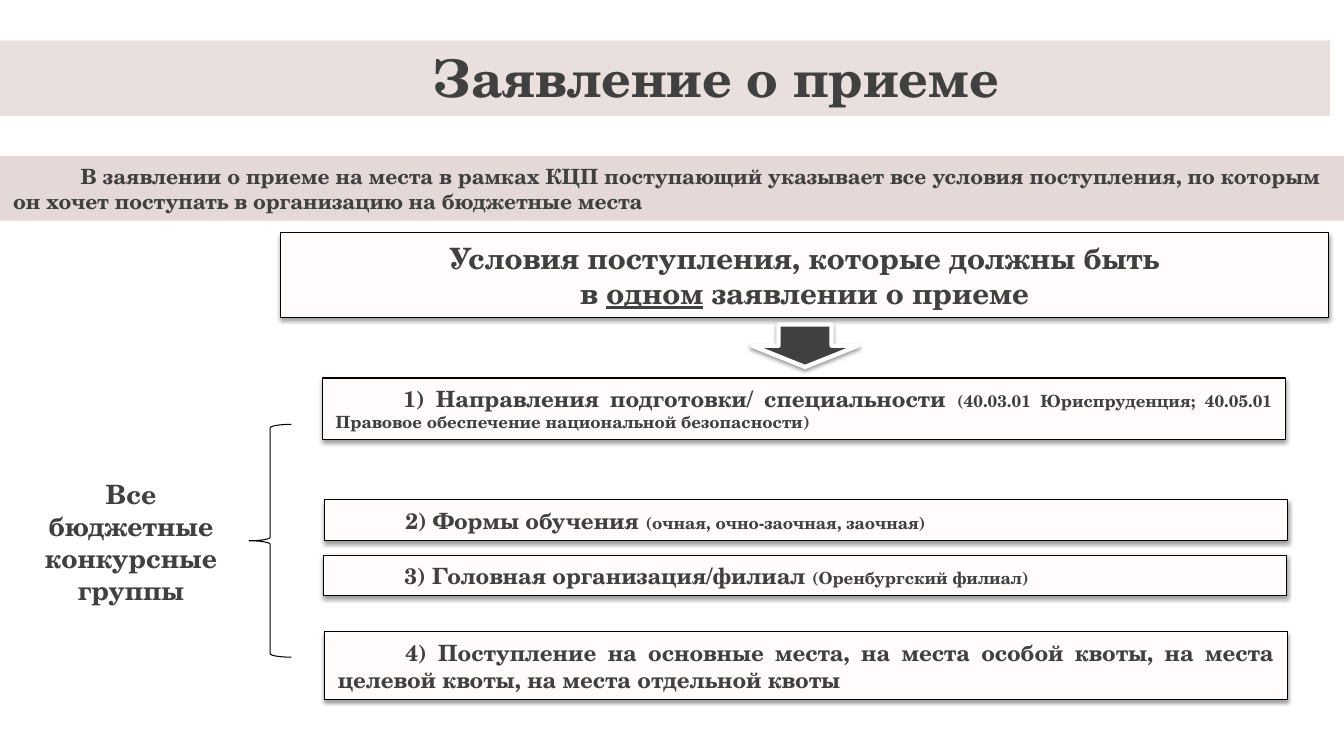
from lxml import etree
from pptx import Presentation
from pptx import util as u
from pptx.dml.color import RGBColor
from pptx.enum import shapes, text
from pptx.oxml.ns import qn

COLORS = {"band": "591300", "box": "FFFCFB", "text": "404040",
          "line": "000000", "white": "FFFFFF"}
FONT = "TeX Gyre Schola"
SHAPE = shapes.MSO_SHAPE
ALIGN = text.PP_ALIGN


def rgb(name):
    return RGBColor.from_string(COLORS[name])


def add_alpha(color, percent):
    etree.SubElement(color, qn("a:alpha"), val=str(percent * 1000))


def add_shadow(effects):
    shadow = etree.SubElement(effects, qn("a:outerShdw"), blurRad=str(u.Pt(3.1)),
                              dist=str(u.Pt(1.6)), dir="5400000", rotWithShape="0")
    add_alpha(etree.SubElement(shadow, qn("a:srgbClr"), val=COLORS["line"]), 38)


class SlideBuilder:
    def __init__(self, s):
        self.s = s

    def fill_text(self, sp, paragraphs, align, indent=0, anchor=text.MSO_ANCHOR.MIDDLE):
        """Each paragraph is a list of (text, size, underline) runs."""
        tf = sp.text_frame
        tf.word_wrap = True
        tf.auto_size = text.MSO_AUTO_SIZE.NONE
        tf.vertical_anchor = anchor
        tf.margin_left = tf.margin_right = u.Inches(0.13)
        tf.margin_top = tf.margin_bottom = u.Inches(0.07)
        for i, runs in enumerate(paragraphs):
            p = tf.add_paragraph() if i else tf.paragraphs[0]
            p.alignment = align
            if indent:
                p._p.get_or_add_pPr().set("indent", str(u.Inches(indent)))
            for content, size, underline in runs:
                r = p.add_run()
                r.text = content
                r.font.name, r.font.size, r.font.bold = FONT, u.Pt(size), True
                r.font.color.rgb = rgb("text")
                if underline:
                    r.font.underline = True

    def place(self, sp, at):
        sp.left, sp.top, sp.width, sp.height = map(u.Inches, at)

    def title(self, at, content, size):
        sp = self.s.shapes.title
        self.place(sp, at)
        self.fill_text(sp, [[(content, size, False)]], ALIGN.CENTER)

    def shape(self, kind, at, fill=None, line=None, width=0.75, shadow=False):
        sp = self.s.shapes.add_shape(kind, *map(u.Inches, at))
        if fill:
            sp.fill.solid()
            sp.fill.fore_color.rgb = rgb(fill)
        else:
            sp.fill.background()
        if line:
            sp.line.color.rgb = rgb(line)
            sp.line.width = u.Pt(width)
        else:
            sp.line.fill.background()
        sp.shadow.inherit = False
        if shadow:
            add_shadow(sp._element.spPr.find(qn("a:effectLst")))
        return sp

    def band(self, at, opacity):
        sp = self.shape(SHAPE.RECTANGLE, at, "band")
        add_alpha(sp._element.spPr.find(qn("a:solidFill"))[0], opacity)
        return sp

    def box(self, at, paragraphs, align, indent=0):
        sp = self.shape(SHAPE.RECTANGLE, at, "box", "line", shadow=True)
        self.fill_text(sp, paragraphs, align, indent)

    def label(self, at, lines, size):
        sp = self.s.shapes.add_textbox(*map(u.Inches, at))
        self.fill_text(sp, [[(line, size, False)] for line in lines], ALIGN.CENTER,
                       anchor=text.MSO_ANCHOR.TOP)
        for p in sp.text_frame.paragraphs:
            for r in p.runs:
                effects = etree.Element(qn("a:effectLst"))
                r._r.rPr.find(qn("a:solidFill")).addnext(effects)
                add_shadow(effects)


def main():
    prs = Presentation()
    prs.slide_width, prs.slide_height = u.Inches(13.33), u.Inches(7.5)
    b = SlideBuilder(prs.slides.add_slide(prs.slide_layouts[5]))

    # Title over its band
    b.band((-0.14, 0.4, 13.33, 0.75), 13)
    b.title((3.97, 0.38, 6.26, 0.76), "Заявление о приеме", 37)
    title = b.s.shapes.title._element
    title.getparent().append(title)

    # Introduction
    intro = b.band((0, 1.55, 13.33, 0.64), 16)
    b.fill_text(intro, [[("В заявлении о приеме на места в рамках КЦП поступающий указывает "
                          "все условия поступления, по которым он хочет поступать "
                          "в организацию на бюджетные места", 15, False)]], ALIGN.LEFT, 0.67)

    # Heading box and arrow
    b.box((2.78, 2.31, 10.4, 0.84),
          [[("Условия поступления, которые должны быть", 21, False)],
           [("в ", 21, False), ("одном", 21, True), (" заявлении о приеме", 21, False)]],
          ALIGN.CENTER)
    b.shape(SHAPE.DOWN_ARROW, (7.46, 3.22, 1.05, 0.42), "text", "white", 3, True)

    # Conditions: left, top, height, main text, detail
    conditions = [
        (3.2, 3.75, 0.61, "1) Направления подготовки/ специальности ",
         "(40.03.01 Юриспруденция; 40.05.01 Правовое обеспечение национальной безопасности)"),
        (3.22, 4.96, 0.4, "2) Формы обучения ", "(очная, очно-заочная, заочная)"),
        (3.21, 5.51, 0.4, "3) Головная организация/филиал ", "(Оренбургский филиал)"),
        (3.22, 6.27, 0.67, "4) Поступление на основные места, на места особой квоты, "
         "на места целевой квоты, на места отдельной квоты", ""),
    ]
    for left, top, height, main_text, detail in conditions:
        runs = [(main_text, 16, False)]
        if detail:
            runs.append((detail, 12, False))
        b.box((left, top, 9.55, height), [runs], ALIGN.JUSTIFY, 0.67)

    # Group label and brace
    b.label((0.26, 4.67, 2.08, 1.41), ["Все", "бюджетные конкурсные", "группы"], 19)
    b.shape(SHAPE.LEFT_BRACE, (2.47, 4.21, 0.42, 2.31), line="line")

    prs.save("out.pptx")


if __name__ == "__main__":
    main()
